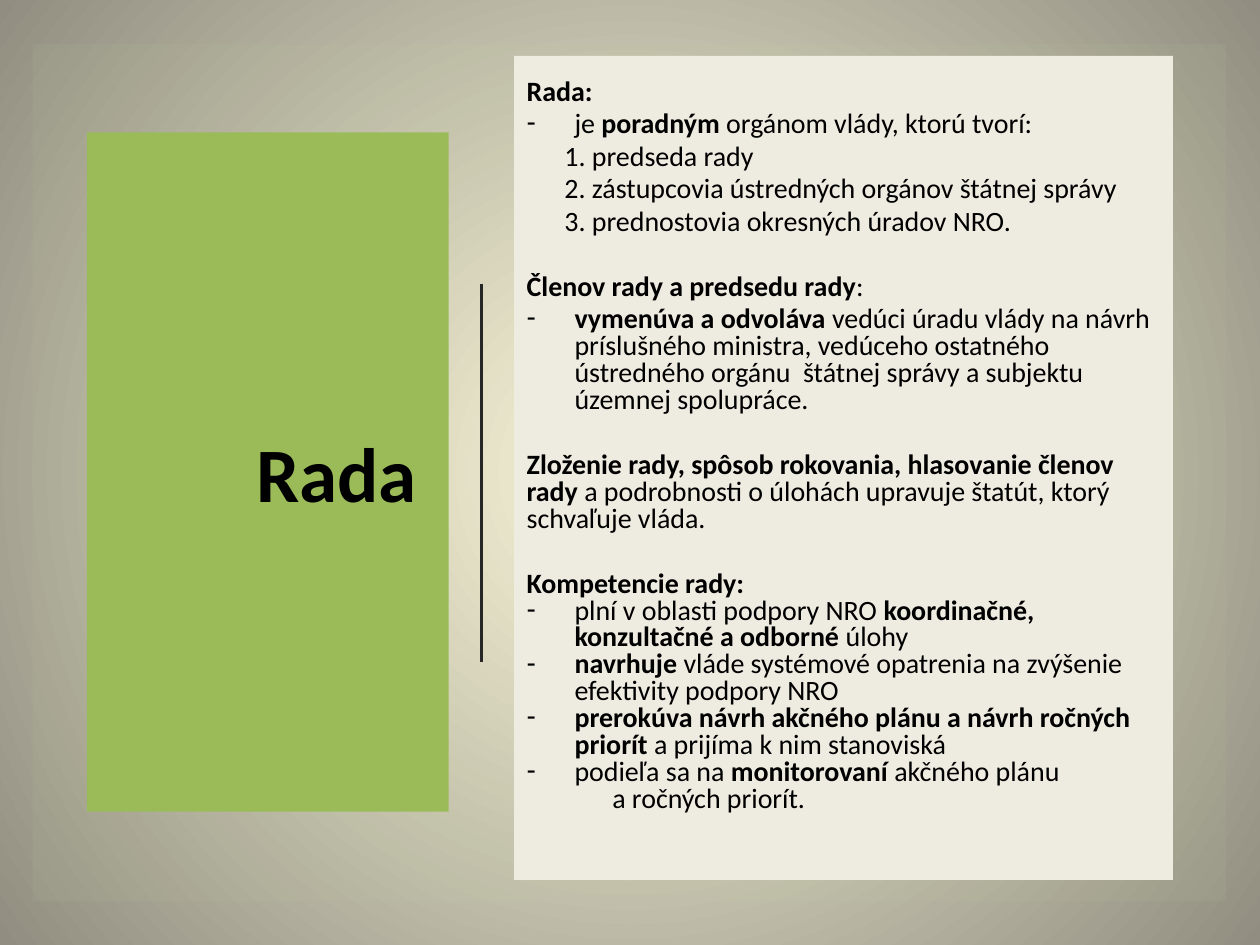
from lxml.etree import SubElement
from pptx import Presentation
from pptx.dml.color import RGBColor
from pptx.enum.shapes import MSO_CONNECTOR as Connector, MSO_SHAPE as Shape
from pptx.enum.text import MSO_ANCHOR as Anchor, MSO_AUTO_SIZE as AutoSize, PP_ALIGN as Align
from pptx.oxml.ns import qn
from pptx.util import Inches, Pt

COLORS = {
    "glow": "FCF7DD", "edge": "918E81", "frame": "C3D69B", "rule": "262626",
    "title": "9BBB59", "body": "EEECE1", "text": "000000",
}
FONT = "Calibri"
WIDTH, HEIGHT = Inches(10), Inches(7.5)
FRAME = (0.026, 0.047, 0.947, 0.907)
TITLE = (0.069, 0.14, 0.287, 0.719)
RULE = (0.382, 0.3, 0, 0.4)
BODY = (0.408, 0.059, 0.523, 0.872)

STYLES = {
    "first": (0, 0, 0),
    "heading": (0, 0, 21.8),
    "dash": (0.38, -0.38, 3.2),
    "number": (0.3, 0, 3.2),
    "tight": (0.38, -0.38, 0),
    "tail": (0.68, 0, 0),
}
CONTENT = [
    ("first", [("Rada:", True)]),
    ("dash", [("je ", False), ("poradným", True), (" orgánom vlády, ktorú tvorí:", False)]),
    ("number", [("1. predseda rady", False)]),
    ("number", [("2. zástupcovia ústredných orgánov štátnej správy", False)]),
    ("number", [("3. prednostovia okresných úradov NRO.", False)]),
    ("heading", [("Členov rady a predsedu rady", True), (":", False)]),
    ("dash", [("vymenúva a odvoláva ", True),
              ("vedúci úradu vlády na návrh príslušného ministra, vedúceho ostatného "
               "ústredného orgánu  štátnej správy a subjektu územnej spolupráce.", False)]),
    ("heading", [("Zloženie rady, spôsob rokovania, hlasovanie členov rady ", True),
                 ("a podrobnosti o úlohách upravuje štatút, ktorý schvaľuje vláda.", False)]),
    ("heading", [("Kompetencie rady:", True)]),
    ("tight", [("plní v oblasti podpory NRO ", False),
               ("koordinačné, konzultačné a odborné ", True), ("úlohy", False)]),
    ("tight", [("navrhuje", True),
               (" vláde systémové opatrenia na zvýšenie efektivity podpory NRO", False)]),
    ("tight", [("prerokúva návrh akčného plánu a návrh ročných priorít ", True),
               ("a prijíma k nim stanoviská", False)]),
    ("tight", [("podieľa sa na ", False), ("monitorovaní ", True), ("akčného plánu", False)]),
    ("tail", [("a ročných priorít.", False)]),
]


def color(name):
    return RGBColor.from_string(COLORS[name])


def place(box):
    left, top, width, height = box
    return [round(share * side) for share, side in zip((left, top, width, height), (WIDTH, HEIGHT) * 2)]


def paint(shape, name):
    shape.fill.solid()
    shape.fill.fore_color.rgb = color(name)


def add_run(paragraph, text, size, bold):
    run = paragraph.add_run()
    run.text = text
    run.font.name = FONT
    run.font.size = Pt(size)
    run.font.bold = bold
    run.font.color.rgb = color("text")


def fill_background(slide):
    fill = slide.background.fill
    fill.gradient()
    for stop, position, name in zip(fill.gradient_stops, (0, 1), ("glow", "edge")):
        stop.position = position
        stop.color.rgb = color(name)
    gradient = slide.background._cSld.find(".//" + qn("a:gradFill"))
    gradient.remove(gradient.find(qn("a:lin")))
    radial = SubElement(gradient, qn("a:path"), path="circle")
    SubElement(radial, qn("a:fillToRect"), {side: "50000" for side in "ltrb"})


def add_frame(slide, box):
    frame = slide.shapes.add_shape(Shape.RECTANGLE, *place(box))
    frame.shadow.inherit = False
    paint(frame, "frame")
    frame.line.fill.background()
    tint = frame._element.spPr.find(".//" + qn("a:srgbClr"))
    SubElement(tint, qn("a:alpha"), val="8000")


def add_rule(slide, box):
    left, top, width, height = place(box)
    rule = slide.shapes.add_connector(Connector.STRAIGHT, left, top, left + width, top + height)
    rule.line.color.rgb = color("rule")
    rule.line.width = Pt(1.5)
    SubElement(rule._element.spPr, qn("a:effectLst"))


def prepare_placeholder(slide, placeholder, box, name):
    placeholder.left, placeholder.top, placeholder.width, placeholder.height = place(box)
    paint(placeholder, name)
    slide.shapes._spTree.append(placeholder._element)
    frame = placeholder.text_frame
    frame.word_wrap = True
    frame.auto_size = AutoSize.NONE
    return frame


def add_title(slide, box):
    frame = prepare_placeholder(slide, slide.shapes.title, box, "title")
    frame.vertical_anchor = Anchor.MIDDLE
    frame.margin_right = Inches(0.25)
    paragraph = frame.paragraphs[0]
    paragraph.alignment = Align.RIGHT
    add_run(paragraph, "Rada", 44, True)


def add_body(slide, box):
    frame = prepare_placeholder(slide, slide.placeholders[1], box, "body")
    frame.vertical_anchor = Anchor.TOP
    frame.margin_top = Inches(0.19)
    for index, (style, runs) in enumerate(CONTENT):
        paragraph = frame.add_paragraph() if index else frame.paragraphs[0]
        margin, indent, gap = STYLES[style]
        paragraph.line_spacing = 0.8
        paragraph.space_before = Pt(gap)
        properties = paragraph._p.get_or_add_pPr()
        properties.set("marL", str(Inches(margin)))
        properties.set("indent", str(Inches(indent)))
        if indent:
            SubElement(properties, qn("a:buChar"), char="-")
        else:
            SubElement(properties, qn("a:buNone"))
        for text, bold in runs:
            add_run(paragraph, text, 16, bold)


def main():
    presentation = Presentation()
    presentation.slide_width, presentation.slide_height = WIDTH, HEIGHT
    slide = presentation.slides.add_slide(presentation.slide_layouts[1])
    fill_background(slide)
    add_frame(slide, FRAME)
    add_rule(slide, RULE)
    add_title(slide, TITLE)
    add_body(slide, BODY)
    presentation.save("out.pptx")


if __name__ == "__main__":
    main()
